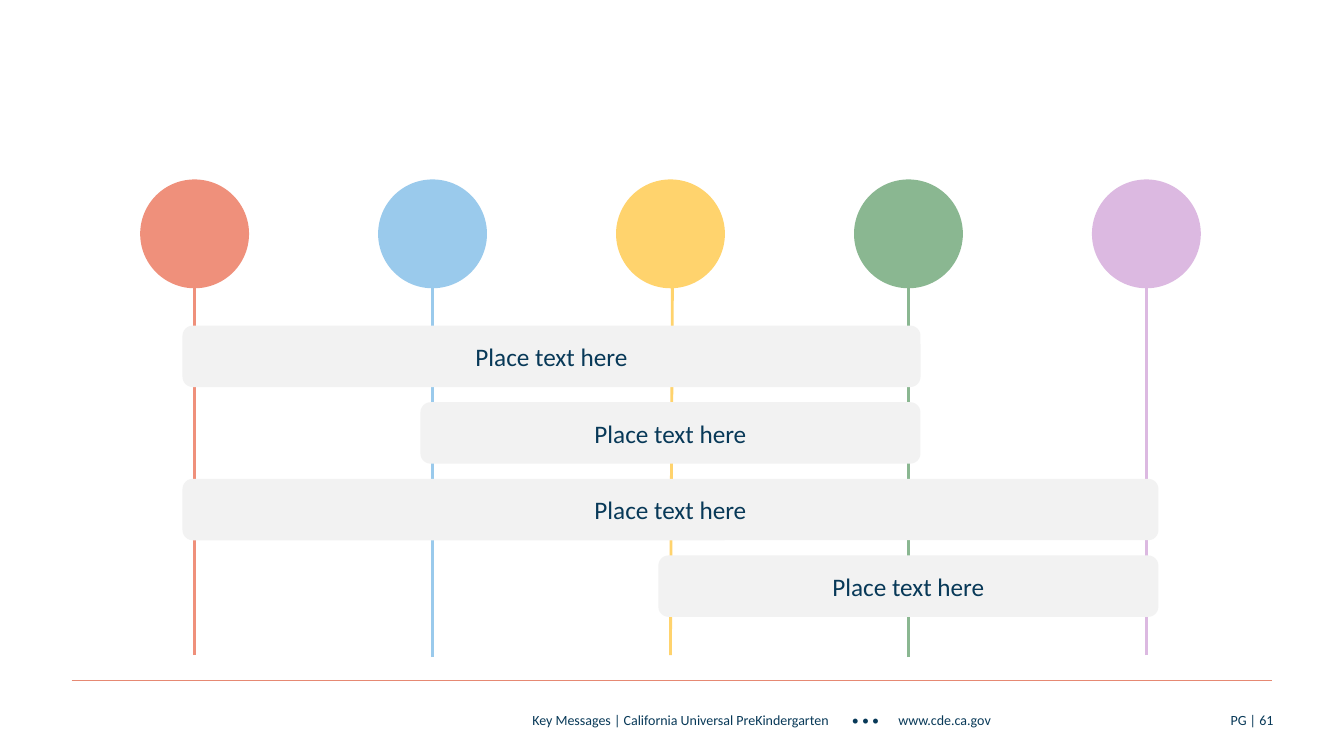
from dataclasses import dataclass

from lxml.etree import SubElement
from pptx import Presentation
from pptx.dml.color import RGBColor
from pptx.enum.shapes import MSO_CONNECTOR, MSO_SHAPE
from pptx.enum.text import MSO_ANCHOR, PP_ALIGN
from pptx.oxml.ns import qn
from pptx.shapes.base import BaseShape
from pptx.slide import Slide
from pptx.util import Inches, Pt

FONT = "Calibri"
NAVY = RGBColor(0x08, 0x39, 0x58)
PALE_GRAY = RGBColor(0xF2, 0xF2, 0xF2)
RULE_RED = RGBColor(0xE6, 0x89, 0x73)
CORAL = RGBColor(0xEF, 0x90, 0x7B)
BLUE = RGBColor(0x9A, 0xCA, 0xEC)
YELLOW = RGBColor(0xFF, 0xD3, 0x6D)
GREEN = RGBColor(0x8A, 0xB7, 0x91)
LILAC = RGBColor(0xDC, 0xB9, 0xE1)

FIRST_CENTER, COLUMN_STEP = 1.93, 2.36
CIRCLE_TOP, CIRCLE_SIZE = 1.78, 1.08
STEM_TOP = 2.73
BAR_TOP, BAR_STEP, BAR_HEIGHT = 3.23, 0.76, 0.61
BAR_OVERHANG = 0.12
FOOTER_TOP, FOOTER_HEIGHT = 6.94, 0.4


@dataclass
class Column:
    color: RGBColor
    stem_bottom: float = 6.5
    stem_lean: float = 0


@dataclass
class Bar:
    first: int
    last: int
    text: str = "Place text here"


COLUMNS = [
    Column(CORAL),
    Column(BLUE, stem_bottom=6.52),
    Column(YELLOW, stem_lean=0.02),
    Column(GREEN, stem_bottom=6.52),
    Column(LILAC),
]
BARS = [Bar(0, 3), Bar(1, 3), Bar(0, 4), Bar(2, 4)]


def column_center(index: int) -> float:
    return FIRST_CENTER + index * COLUMN_STEP


def add_line(s: Slide, x1: float, y1: float, x2: float, y2: float,
             color: RGBColor, width: float) -> None:
    line = s.shapes.add_connector(MSO_CONNECTOR.STRAIGHT, Inches(x1), Inches(y1),
                                  Inches(x2), Inches(y2))
    line.line.color.rgb = color
    line.line.width = Pt(width)
    SubElement(line._element.spPr, qn("a:effectLst"))


def add_filled(s: Slide, kind: MSO_SHAPE, left: float, top: float, width: float,
               height: float, color: RGBColor) -> BaseShape:
    sp = s.shapes.add_shape(kind, Inches(left), Inches(top), Inches(width), Inches(height))
    sp.shadow.inherit = False
    sp.fill.solid()
    sp.fill.fore_color.rgb = color
    sp.line.fill.background()
    return sp


def write_text(sp: BaseShape, text: str, *, size: float, align: PP_ALIGN,
               color: RGBColor = NAVY, tabs: tuple[float, ...] = ()) -> None:
    tf = sp.text_frame
    tf.word_wrap = True
    tf.vertical_anchor = MSO_ANCHOR.MIDDLE
    p = tf.paragraphs[0]
    p.alignment = align
    if tabs:
        tab_list = SubElement(p._p.get_or_add_pPr(), qn("a:tabLst"))
        for tab in tabs:
            SubElement(tab_list, qn("a:tab"), pos=str(Inches(tab)), algn="l")
    r = p.add_run()
    r.text = text
    r.font.name = FONT
    r.font.size = Pt(size)
    r.font.color.rgb = color


def add_footer(s: Slide, left: float, width: float, text: str, align: PP_ALIGN,
               tabs: tuple[float, ...] = ()) -> None:
    sp = s.shapes.add_textbox(Inches(left), Inches(FOOTER_TOP), Inches(width),
                              Inches(FOOTER_HEIGHT))
    tf = sp.text_frame
    tf.margin_left = tf.margin_right = tf.margin_top = tf.margin_bottom = 0
    write_text(sp, text, size=10, align=align, tabs=tabs)


def main() -> None:
    prs = Presentation()
    prs.slide_width, prs.slide_height = Inches(13.33), Inches(7.5)
    s = prs.slides.add_slide(prs.slide_layouts[6])

    add_line(s, 0.71, 6.75, 12.62, 6.75, RULE_RED, 1)
    for i, column in enumerate(COLUMNS):
        x = column_center(i)
        add_filled(s, MSO_SHAPE.OVAL, x - CIRCLE_SIZE / 2, CIRCLE_TOP,
                   CIRCLE_SIZE, CIRCLE_SIZE, column.color)
        add_line(s, x, column.stem_bottom, x + column.stem_lean, STEM_TOP, column.color, 2)

    add_footer(s, 5.28, 6.43,
               "Key Messages | California Universal PreKindergarten\t• • •\twww.cde.ca.gov",
               PP_ALIGN.LEFT, tabs=(3.17, 3.63))
    add_footer(s, 11.92, 0.71, "PG | 61", PP_ALIGN.RIGHT)

    for row, bar in enumerate(BARS):
        left = column_center(bar.first) - BAR_OVERHANG
        right = column_center(bar.last) + BAR_OVERHANG
        sp = add_filled(s, MSO_SHAPE.ROUNDED_RECTANGLE, left, BAR_TOP + row * BAR_STEP,
                        right - left, BAR_HEIGHT, PALE_GRAY)
        write_text(sp, bar.text, size=18, align=PP_ALIGN.CENTER)

    prs.save("out.pptx")


if __name__ == "__main__":
    main()
